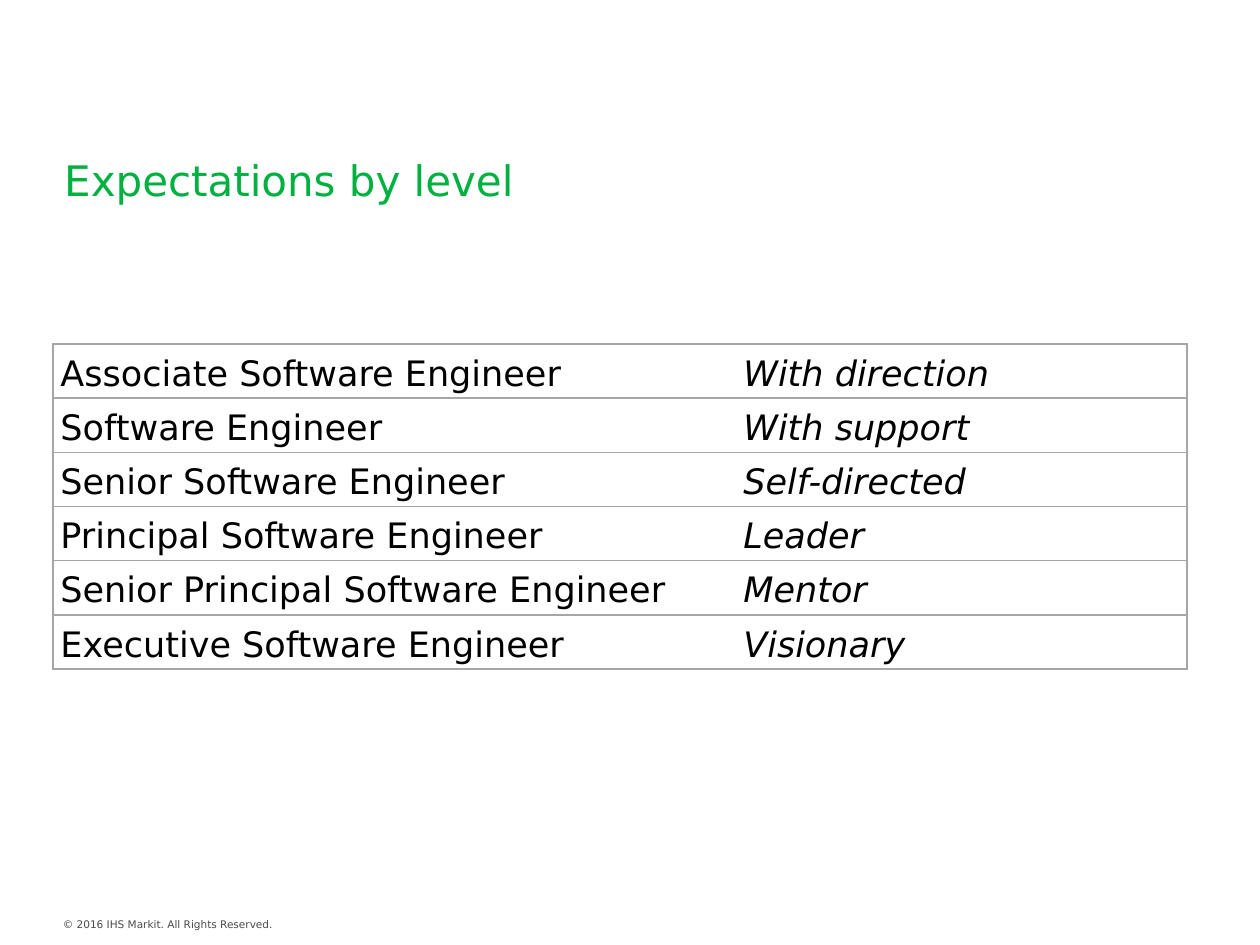
from lxml import etree
from pptx import Presentation
from pptx import util as u
from pptx.dml import color
from pptx.enum import text
from pptx.oxml import ns

FONT = "DejaVu Sans"
GRID = "A6A6A6"
LEVELS = [
    ("Associate Software Engineer", "With direction"),
    ("Software Engineer", "With support"),
    ("Senior Software Engineer", "Self-directed"),
    ("Principal Software Engineer", "Leader"),
    ("Senior Principal Software Engineer", "Mentor"),
    ("Executive Software Engineer", "Visionary"),
]
COLUMNS = [5.42, 3.58]
ROW = 0.43


def add_span(para, words, size, colour, italic=False):
    span = para.add_run()
    span.text = words
    span.font.name = FONT
    span.font.size = u.Pt(size)
    span.font.italic = italic
    span.font.color.rgb = color.RGBColor.from_string(colour)


def set_border(cell, side, colour):
    line = etree.SubElement(cell._tc.get_or_add_tcPr(), ns.qn("a:ln" + side), w=str(u.Pt(1)))
    if colour:
        fill = etree.SubElement(line, ns.qn("a:solidFill"))
        etree.SubElement(fill, ns.qn("a:srgbClr"), val=colour)
    else:
        etree.SubElement(line, ns.qn("a:noFill"))


deck = Presentation()
deck.slide_width, deck.slide_height = u.Inches(10), u.Inches(7.5)
page = deck.slides.add_slide(deck.slide_layouts[5])

title = page.shapes.title
title.left, title.top = u.Inches(0.51), u.Inches(1.23)
title.width, title.height = u.Inches(5.83), u.Inches(0.4)
frame = title.text_frame
frame.margin_left = frame.margin_right = frame.margin_top = frame.margin_bottom = 0
frame.word_wrap = True
frame.auto_size = text.MSO_AUTO_SIZE.SHAPE_TO_FIT_TEXT
frame.vertical_anchor = text.MSO_ANCHOR.TOP
frame.paragraphs[0].alignment = text.PP_ALIGN.LEFT
add_span(frame.paragraphs[0], "Expectations by level", 24, "00B140")

table = page.shapes.add_table(
    len(LEVELS), len(COLUMNS), u.Inches(0.42), u.Inches(2.73),
    u.Inches(sum(COLUMNS)), u.Inches(ROW * len(LEVELS))).table
table.first_row = table.horz_banding = False
for column, width in zip(table.columns, COLUMNS):
    column.width = u.Inches(width)
for row, level in enumerate(LEVELS):
    table.rows[row].height = u.Inches(ROW)
    for column, words in enumerate(level):
        cell = table.cell(row, column)
        cell.margin_left = cell.margin_right = u.Inches(0.06)
        cell.margin_top = cell.margin_bottom = 0
        cell.vertical_anchor = text.MSO_ANCHOR.MIDDLE
        set_border(cell, "L", GRID if column == 0 else None)
        set_border(cell, "R", GRID if column == 1 else None)
        set_border(cell, "T", GRID)
        set_border(cell, "B", GRID)
        cell.fill.background()
        para = cell.text_frame.paragraphs[0]
        para.line_spacing = 1.15
        add_span(para, words, 20, "000000", italic=column == 1)

footer = page.shapes.add_textbox(u.Inches(0.4), u.Inches(7.24), u.Inches(1.92), u.Inches(0.2))
footer.text_frame.word_wrap = False
footer.text_frame.auto_size = text.MSO_AUTO_SIZE.SHAPE_TO_FIT_TEXT
add_span(footer.text_frame.paragraphs[0], "© 2016 IHS Markit. All Rights Reserved.", 6, "4B4B4B")

deck.save("out.pptx")
